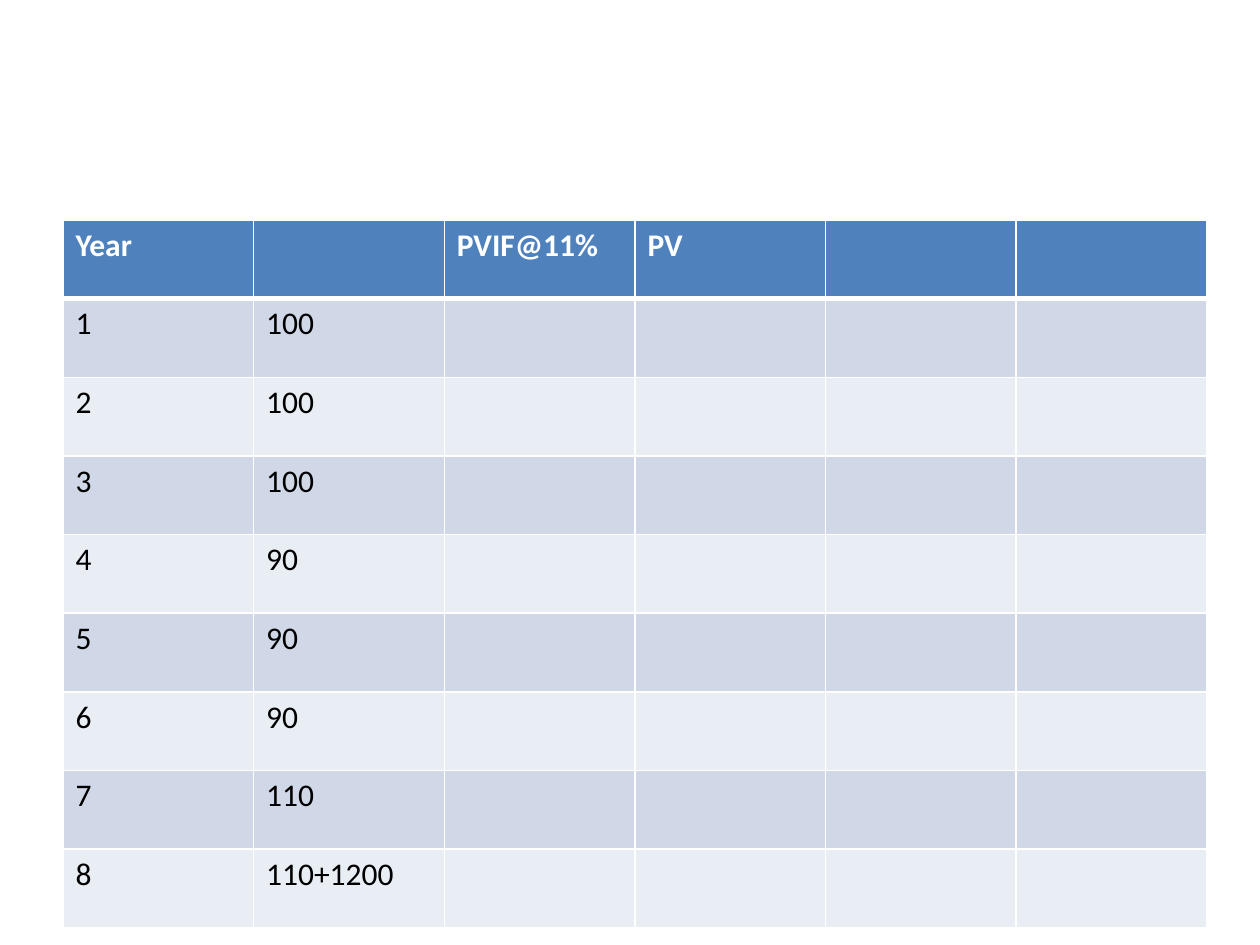
"""Build a slide with a present value table by year."""
from lxml import etree
from pptx import Presentation
from pptx.dml.color import RGBColor
from pptx.oxml.ns import qn
from pptx.util import Emu, Pt

WHITE = RGBColor(0xFF, 0xFF, 0xFF)
BLACK = RGBColor(0, 0, 0)
BLUE = RGBColor(0x4F, 0x81, 0xBD)
BANDS = RGBColor(0xE9, 0xED, 0xF4), RGBColor(0xD0, 0xD8, 0xE8)

SCALE = 914400 / 126
HEADS = ["Year", "", "PVIF@11%", "PV", "", ""]
FLOWS = ["100", "100", "100", "90", "90", "90", "110", "110+1200"]


def px(size):
    return Emu(round(size * SCALE))


def write(frame, text, size=18, color=BLACK, bold=False):
    par = frame.paragraphs[0]
    par.font.size = Pt(size)
    if text:
        run = par.add_run()
        run.text = text
        font = run.font
        font.name, font.size, font.bold = "Calibri", Pt(size), bold
        font.color.rgb = color


def edge(cell, side, width, color=WHITE):
    props = cell._tc.get_or_add_tcPr()
    line = etree.SubElement(props, qn(f"a:ln{side}"), w=str(Pt(width)))
    fill = etree.SubElement(line, qn("a:solidFill"))
    etree.SubElement(fill, qn("a:srgbClr"), val=str(color))


class Deck:
    """Hold the table style and the current slide."""

    def __init__(self, wide, high):
        self.show = Presentation()
        self.show.slide_width, self.show.slide_height = px(wide), px(high)
        self.slide = self.show.slides.add_slide(self.show.slide_layouts[6])
        self.thin, self.thick = 1, 3

    def table(self, data, left, top, wide, high):
        rows, cols = len(data), len(data[0])
        table = self.slide.shapes.add_table(
            rows, cols, px(left), px(top), px(wide), px(high)).table
        for col in table.columns:
            col.width = px(wide / cols)
        for r, (row, texts) in enumerate(zip(table.rows, data)):
            row.height = px(high / rows)
            for cell, text in zip(row.cells, texts):
                self.cell(cell, text, r)

    def cell(self, cell, text, row):
        head = row == 0
        edge(cell, "L", self.thin)
        edge(cell, "R", self.thin)
        edge(cell, "T", self.thick if row == 1 else self.thin)
        edge(cell, "B", self.thick if head else self.thin)
        cell.fill.solid()
        cell.fill.fore_color.rgb = BLUE if head else BANDS[row % 2]
        write(cell.text_frame, text, color=WHITE if head else BLACK, bold=head)


def main():
    deck = Deck(1260, 945)
    years = [[str(year), flow, "", "", "", ""]
             for year, flow in enumerate(FLOWS, 1)]
    deck.table([HEADS] + years, 63, 220, 1144, 708)
    deck.show.save("out.pptx")


if __name__ == "__main__":
    main()
